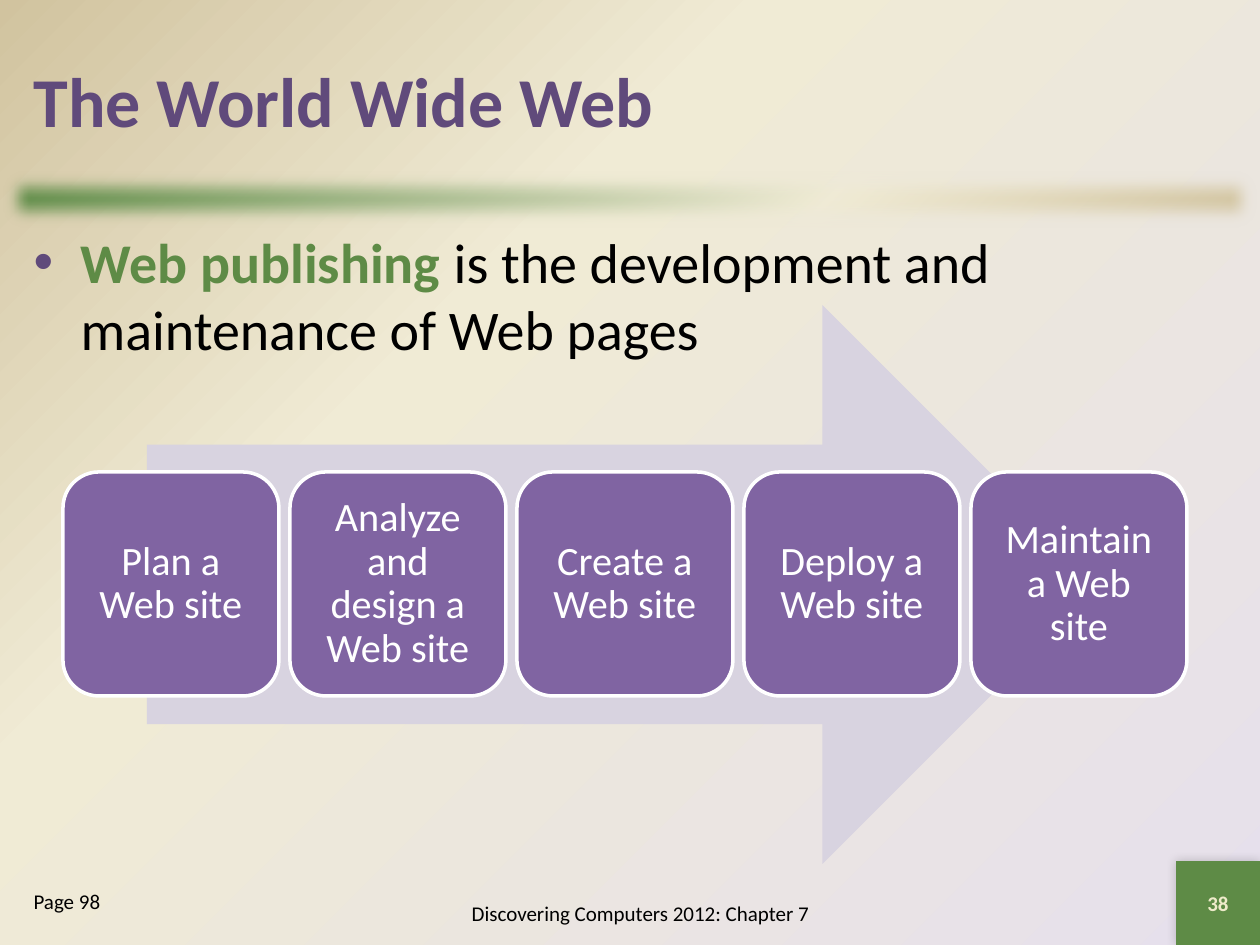
from lxml import etree
from pptx import Presentation
from pptx.dml.color import RGBColor
from pptx.enum.shapes import MSO_SHAPE as Shape
from pptx.enum.text import MSO_ANCHOR as Anchor, MSO_AUTO_SIZE as AutoSize, PP_ALIGN as Align
from pptx.oxml import parse_xml
from pptx.oxml.ns import nsdecls, qn
from pptx.util import Emu, Pt

PX = 914400 / 126
FONT = "Calibri"
GREEN, PURPLE, CREAM, TAN = "5E8B46", "604A7B", "F0EBD5", "D1C39F"
BLACK, WHITE = "000000", "FFFFFF"
STEPS = ["Plan a Web site", "Analyze and design a Web site", "Create a Web site",
         "Deploy a Web site", "Maintain a Web site"]


def px(length):
    """Turn pixels into EMU."""
    return Emu(round(length * PX))


def color(value):
    """Turn a hex string into a colour."""
    return RGBColor.from_string(value)


def place(shape, left, top, width, height):
    """Move and size a shape in pixels."""
    shape.left, shape.top, shape.width, shape.height = map(px, (left, top, width, height))


def set_font(font, size, value, bold=False):
    """Set the typeface, size, colour and weight of a font."""
    font.name, font.size, font.bold = FONT, Pt(size), bold
    font.color.rgb = color(value)


def set_gradient(fill, owner, colors, direction):
    """Give a fill three colours with stops at 0, 65 and 100 percent."""
    fill.gradient()
    old = next(owner.iter(qn("a:gradFill")))
    stops = "".join(f'<a:gs pos="{stop}000"><a:srgbClr val="{value}"/></a:gs>'
                    for stop, value in zip((0, 65, 100), colors))
    new = parse_xml(f'<a:gradFill {nsdecls("a")} rotWithShape="1">'
                    f'<a:gsLst>{stops}</a:gsLst>{direction}</a:gradFill>')
    old.getparent().replace(old, new)


def set_effect(shape, effect):
    """Replace the effects of a shape with one effect."""
    shape.shadow.inherit = False
    effects = shape.element.spPr.find(qn("a:effectLst"))
    effects.append(parse_xml(effect.replace(" ", f" {nsdecls('a')} ", 1)))


def add_shape(page, kind, box, fill=None):
    """Add a preset shape without line or shadow."""
    shape = page.shapes.add_shape(kind, *map(px, box))
    shape.shadow.inherit = False
    shape.line.fill.background()
    if fill:
        shape.fill.solid()
        shape.fill.fore_color.rgb = color(fill)
    return shape


def add_label(page, text, box, value, bold=False):
    """Add a small centred text box."""
    frame = page.shapes.add_textbox(*map(px, box)).text_frame
    frame.word_wrap, frame.vertical_anchor = True, Anchor.MIDDLE
    para = frame.paragraphs[0]
    para.text, para.alignment = text, Align.CENTER
    set_font(para.font, 12, value, bold)


def prepare(holder, box, anchor=Anchor.TOP):
    """Place a placeholder and return its first paragraph."""
    place(holder, *box)
    frame = holder.text_frame
    frame.auto_size, frame.vertical_anchor = AutoSize.NONE, anchor
    para = frame.paragraphs[0]
    para.alignment, para.space_before = Align.LEFT, Pt(0)
    return para


def set_bullet(para, char=None):
    """Set a hanging indent with a purple bullet, or with none."""
    props = para._p.get_or_add_pPr()
    props.set("marL", str(px(47)))
    props.set("indent", str(-px(47)))
    if char:
        tint = etree.SubElement(props, qn("a:buClr"))
        etree.SubElement(tint, qn("a:srgbClr")).set("val", PURPLE)
        etree.SubElement(props, qn("a:buChar")).set("char", char)
    else:
        etree.SubElement(props, qn("a:buNone"))


def add_backdrop(page):
    """Add the background, the soft rule and the number square."""
    set_gradient(page.background.fill, page.element, ("E6E0EC", CREAM, TAN),
                 '<a:path path="circle"><a:fillToRect l="100000" t="100000"/></a:path>')
    rule = add_shape(page, Shape.RECTANGLE, (0, 168, 1260, 63))
    set_gradient(rule.fill, rule.element, (GREEN, CREAM, TAN), '<a:lin ang="2700000" scaled="0"/>')
    set_effect(rule, '<a:softEdge rad="127000"/>')
    square = add_shape(page, Shape.RECTANGLE, (1176, 861, 84, 84), GREEN)
    set_effect(square, '<a:outerShdw blurRad="76200" dist="0" dir="13500000">'
                       '<a:srgbClr val="000000"><a:alpha val="20000"/></a:srgbClr></a:outerShdw>')


def fill_placeholders(page):
    """Write the title, the definition and the page reference."""
    title, body, reference = page.placeholders
    para = prepare(title, (21, 21, 1218, 158), Anchor.MIDDLE)
    para.text = "The World Wide Web"
    set_font(para.font, 40, PURPLE, True)

    para = prepare(body, (21, 221, 1218, 640))
    set_bullet(para, "•")
    for text, value, bold in (("Web publishing ", GREEN, True),
                              ("is the development and maintenance of Web pages", BLACK, False)):
        span = para.add_run()
        span.text = text
        set_font(span.font, 32, value, bold)

    para = prepare(reference, (21, 882, 231, 63))
    set_bullet(para)
    para.text = "Page 98"
    set_font(para.font, 12, BLACK)


def add_step(page, index, text):
    """Add one rounded step of the process."""
    step = add_shape(page, Shape.ROUNDED_RECTANGLE, (63 + 227 * index, 472, 216, 224), "8064A2")
    step.line.color.rgb, step.line.width = color(WHITE), Pt(2)
    frame = step.text_frame
    frame.word_wrap, frame.vertical_anchor = True, Anchor.MIDDLE
    frame.margin_left = frame.margin_right = frame.margin_top = frame.margin_bottom = px(12)
    para = frame.paragraphs[0]
    para.text, para.alignment, para.line_spacing = text, Align.CENTER, 0.9
    set_font(para.font, 23, WHITE)


def main():
    """Build the slide and save it."""
    deck = Presentation()
    deck.slide_width, deck.slide_height = px(1260), px(945)
    page = deck.slides.add_slide(deck.slide_layouts[3])
    add_backdrop(page)
    fill_placeholders(page)
    add_label(page, "Discovering Computers 2012: Chapter 7", (378, 882, 525, 63), BLACK)
    add_label(page, "38", (1176, 861, 84, 84), "EEEBCA", True)
    add_shape(page, Shape.RIGHT_ARROW, (147, 305, 955, 559), "D8D3E0")
    for index, text in enumerate(STEPS):
        add_step(page, index, text)
    deck.save("out.pptx")


if __name__ == "__main__":
    main()
